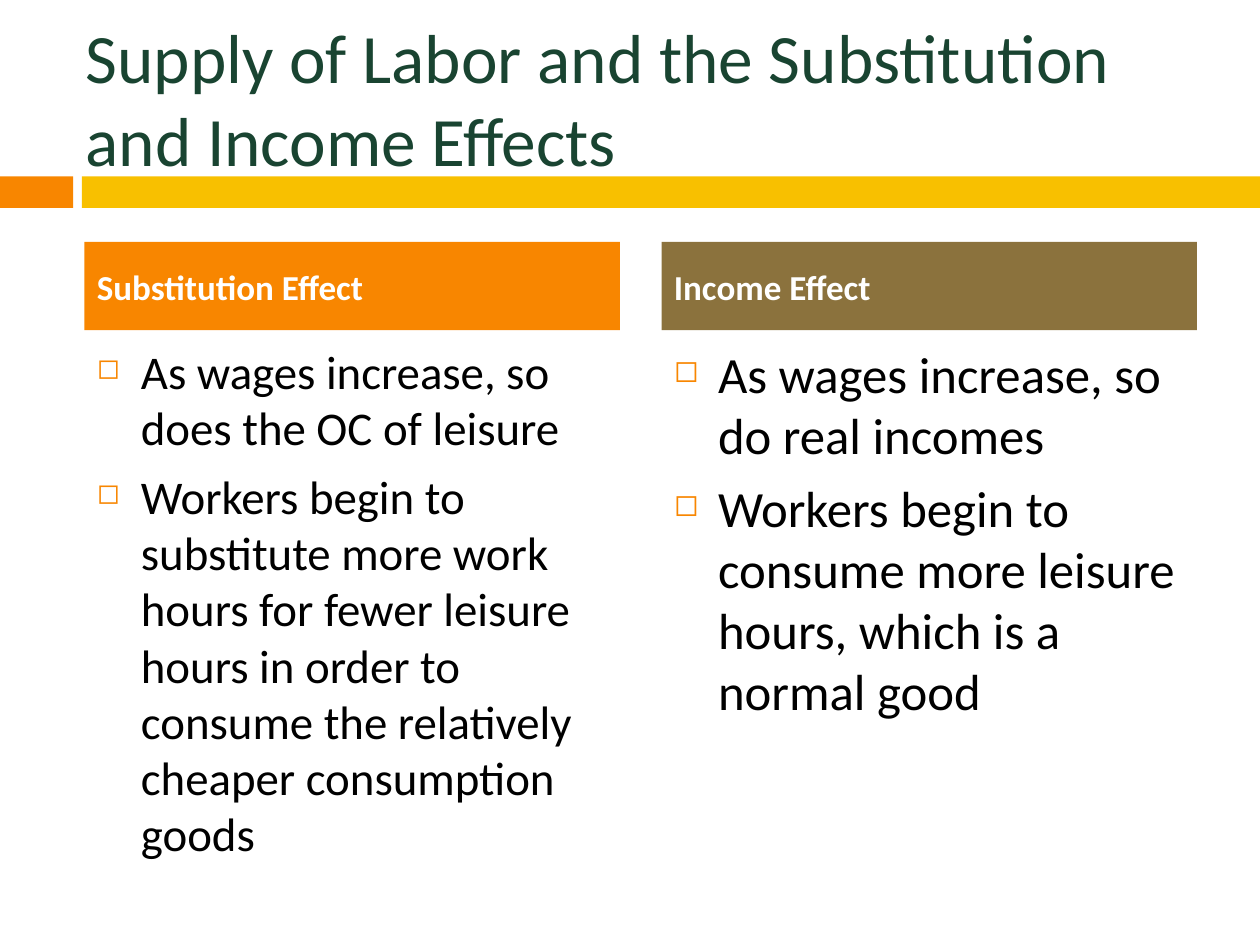
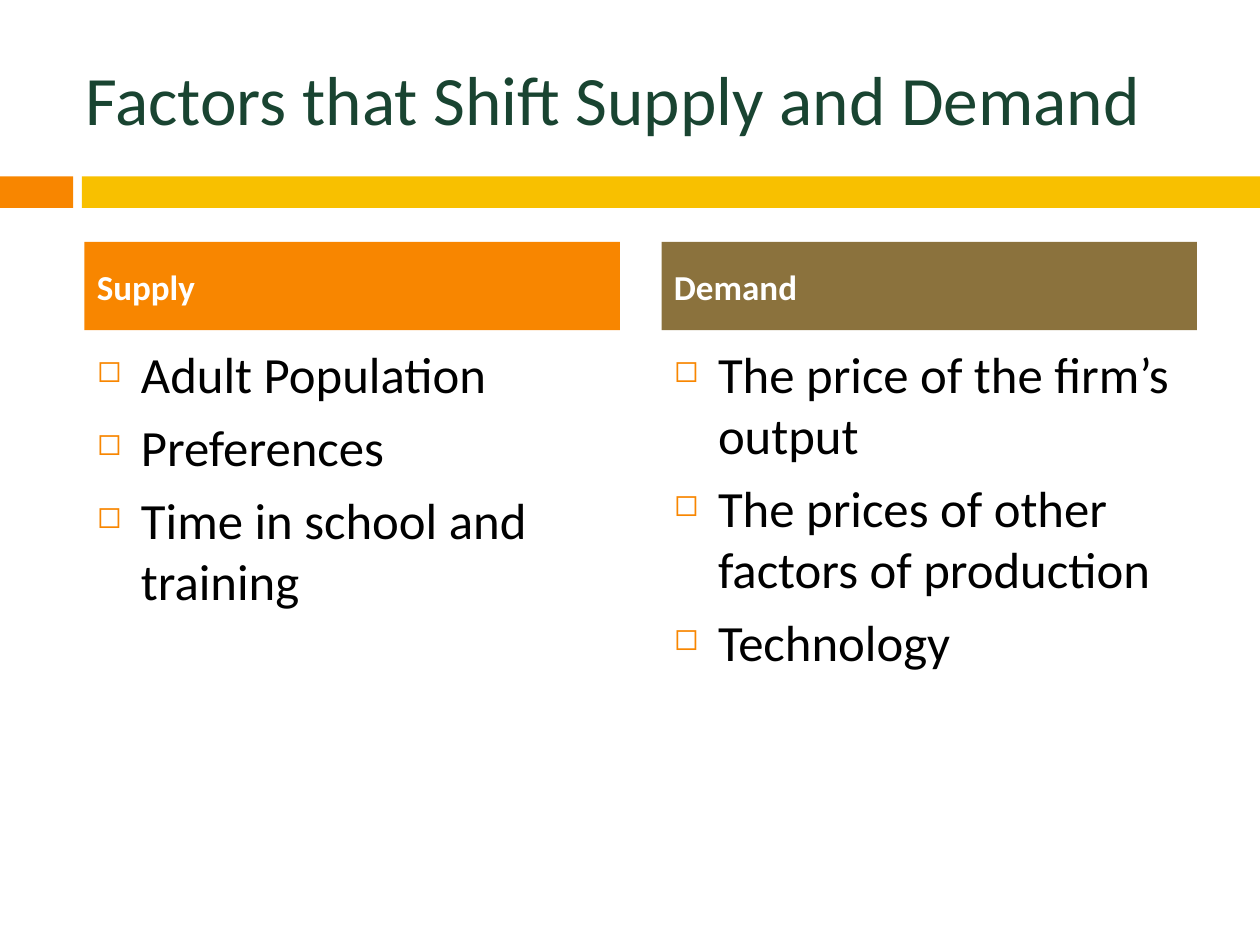
from collections import namedtuple

from lxml import etree
from pptx import Presentation
from pptx.dml.color import RGBColor
from pptx.enum.shapes import MSO_SHAPE
from pptx.enum.text import MSO_ANCHOR, PP_ALIGN
from pptx.oxml.ns import qn
from pptx.util import Inches, Pt

RECT = MSO_SHAPE.RECTANGLE
MIDDLE, TOP = MSO_ANCHOR.MIDDLE, MSO_ANCHOR.TOP
LEFT = PP_ALIGN.LEFT

ORANGE = RGBColor(0xF8, 0x86, 0x00)
GOLD = RGBColor(0xF8, 0xC0, 0x00)
BROWN = RGBColor(0x8B, 0x72, 0x3D)
GREEN = RGBColor(0x19, 0x44, 0x31)
BLACK = RGBColor(0, 0, 0)
WHITE = RGBColor(0xFF, 0xFF, 0xFF)

FONT = "Calibri"
WIDE, HIGH = 10, 7.5
HANG = 0.35

Box = namedtuple("Box", "x y w h")
TITLE = Box(0.58, 0.3, 8.92, 0.95)
BAND = Box(0, 1.4, WIDE, 0.25)
BODY = Box(0.67, 1.92, 8.83, 4.67)
COL = 4.25
HEAD, GAP = 0.7, 0.05

SLIDES = [
    ("Supply of Labor and the Substitution and Income Effects", [
        ("Substitution Effect", 26.8, [
            "As wages increase, so does the OC of leisure",
            "Workers begin to substitute more work hours for fewer leisure "
            "hours in order to consume the relatively cheaper consumption goods",
        ]),
        ("Income Effect", 29, [
            "As wages increase, so do real incomes",
            "Workers begin to consume more leisure hours, which is a normal good",
        ]),
    ]),
    ("Factors that Shift Supply and Demand", [
        ("Supply", 29, [
            "Adult Population",
            "Preferences",
            "Time in school and training",
        ]),
        ("Demand", 29, [
            "The price of the firm’s output",
            "The prices of other factors of production",
            "Technology",
        ]),
    ]),
]


def place(box):
    """Turn a box in inches into slide lengths."""
    return [Inches(side) for side in box]


def block(slide, box, fill):
    """Add a plain filled rectangle."""
    shape = slide.shapes.add_shape(RECT, *place(box))
    shape.shadow.inherit = False
    shape.fill.solid()
    shape.fill.fore_color.rgb = fill
    shape.line.fill.background()
    return shape


def write(shape, lines, size, color, anchor=MIDDLE, bold=False, before=0):
    """Fill a shape with one paragraph per line and style it."""
    frame = shape.text_frame
    frame.word_wrap = True
    frame.vertical_anchor = anchor
    frame.text = "\n".join(lines)
    for para in frame.paragraphs:
        para.alignment = LEFT
        para.space_before = Pt(before)
        for run in para.runs:
            run.font.name = FONT
            run.font.size = Pt(size)
            run.font.bold = bold
            run.font.color.rgb = color
    return frame


def bullet(para):
    """Give a paragraph a hanging square bullet."""
    props = para._p.get_or_add_pPr()
    props.set("marL", str(Inches(HANG)))
    props.set("indent", str(-Inches(HANG)))
    tint = etree.SubElement(props, qn("a:buClr"))
    etree.SubElement(tint, qn("a:srgbClr"), val=str(ORANGE))
    etree.SubElement(props, qn("a:buSzPct"), val="60000")
    etree.SubElement(props, qn("a:buChar"), char="◻")


def band(slide, box):
    """Draw the two-part rule below the title."""
    tab, start = 0.58, 0.65
    block(slide, box._replace(w=tab), ORANGE)
    block(slide, box._replace(x=box.x + start, w=box.w - start), GOLD)


def title(slide, box, text):
    """Write the slide title."""
    write(slide.shapes.add_textbox(*place(box)), [text], 39.6, GREEN)


def column(slide, box, fill, head, size, points):
    """Stack a coloured heading over its bulleted points."""
    top = HEAD + GAP
    area = box._replace(y=box.y + top, h=box.h - top)
    text = slide.shapes.add_textbox(*place(area))
    frame = write(text, points, size, BLACK, TOP, before=7)
    for para in frame.paragraphs:
        bullet(para)
    bar = block(slide, box._replace(h=HEAD), fill)
    write(bar, [head], 20, WHITE, bold=True, before=7)


def compare(slide, box, parts):
    """Set columns side by side, spread over the box."""
    step = (box.w - COL) / (len(parts) - 1)
    for i, (fill, part) in enumerate(zip((ORANGE, BROWN), parts)):
        column(slide, box._replace(x=box.x + i * step, w=COL), fill, *part)


def main():
    """Build and save the slides."""
    deck = Presentation()
    deck.slide_width, deck.slide_height = Inches(WIDE), Inches(HIGH)
    for name, parts in SLIDES:
        slide = deck.slides.add_slide(deck.slide_layouts[6])
        band(slide, BAND)
        title(slide, TITLE, name)
        compare(slide, BODY, parts)
    deck.save("out.pptx")


if __name__ == "__main__":
    main()
